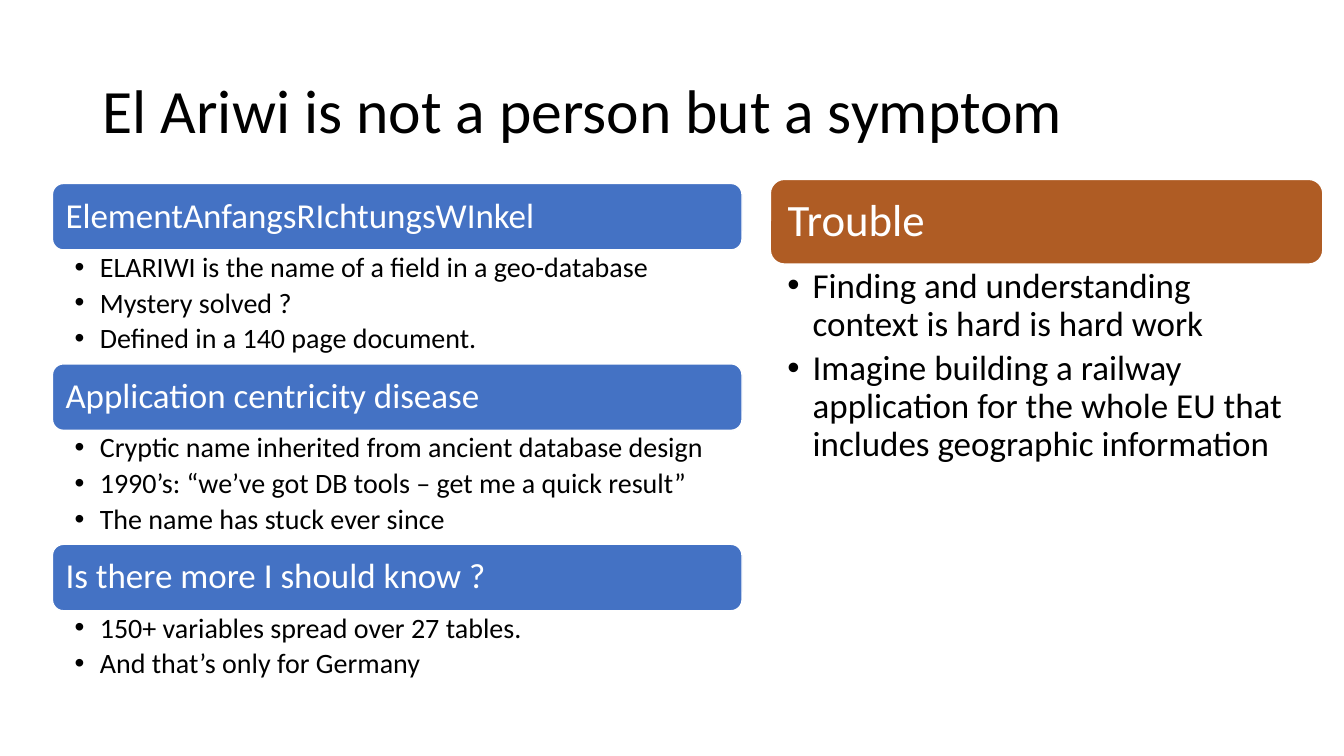
"""Build the slide on the El Ariwi symptom: three blue topics and one brown conclusion."""
from dataclasses import dataclass

from lxml import etree
from pptx import Presentation
from pptx.dml.color import RGBColor
from pptx.enum import shapes, text
from pptx.oxml.ns import qn
from pptx.util import Inches, Pt

TITLE = "El Ariwi is not a person but a symptom"
TOPICS = [
    ("ElementAnfangsRIchtungsWInkel", [
        "ELARIWI is the name of a field in a geo-database",
        "Mystery solved ?",
        "Defined in a 140 page document.",
    ]),
    ("Application centricity disease", [
        "Cryptic name inherited from ancient database design",
        "1990’s: “we’ve got DB tools – get me a quick result”",
        "The name has stuck ever since",
    ]),
    ("Is there more I should know ?", [
        "150+ variables spread over 27 tables.",
        "And that’s only for Germany",
    ]),
]
CONCLUSIONS = [
    ("Trouble", [
        "Finding and understanding context is hard is hard work",
        "Imagine building a railway application for the whole EU that includes geographic information",
    ]),
]


@dataclass(frozen=True)
class Theme:
    font: str = "Calibri"
    ink: RGBColor = RGBColor(0x00, 0x00, 0x00)
    paper: RGBColor = RGBColor(0xFF, 0xFF, 0xFF)
    blue: RGBColor = RGBColor(0x44, 0x72, 0xC4)
    brown: RGBColor = RGBColor(0xAF, 0x5C, 0x24)
    title_size: int = 44
    line_spacing: float = 0.9
    list_gap: float = 0.2
    indent: float = 0.25


@dataclass(frozen=True)
class Column:
    left: float
    top: float
    width: float
    bar_height: float
    list_height: float
    bar_inset: float
    list_insets: tuple
    bar_size: int
    list_size: int
    color: RGBColor


THEME = Theme()
TOPIC_COLUMN = Column(0.52, 1.82, 6.84, 0.66, 1.13, 0.1, (0.22, 0.03, 0.19, 0.03), 25, 20, THEME.blue)
CONCLUSION_COLUMN = Column(7.64, 1.78, 5.48, 0.84, 2.1, 0.13, (0.17, 0.04, 0.25, 0.04), 32, 25, THEME.brown)


def place(shape, left, top, width, height):
    shape.left, shape.top = Inches(left), Inches(top)
    shape.width, shape.height = Inches(width), Inches(height)


def set_frame(frame, insets, anchor):
    frame.margin_left, frame.margin_top, frame.margin_right, frame.margin_bottom = map(Inches, insets)
    frame.vertical_anchor = anchor
    frame.word_wrap = True
    frame.auto_size = text.MSO_AUTO_SIZE.NONE


def style(para, size, color):
    para.alignment = text.PP_ALIGN.LEFT
    para.line_spacing = THEME.line_spacing
    para.space_before = Pt(0)
    para.font.name = THEME.font
    para.font.size = Pt(size)
    para.font.bold = False
    para.font.color.rgb = color


def add_bullet(para):
    properties = para._p.get_or_add_pPr()
    properties.set("marL", str(Inches(THEME.indent)))
    properties.set("indent", str(-Inches(THEME.indent)))
    etree.SubElement(properties, qn("a:buFont")).set("typeface", "Arial")
    etree.SubElement(properties, qn("a:buChar")).set("char", "•")


def add_bar(page, heading, column, top):
    bar = page.shapes.add_shape(
        shapes.MSO_SHAPE.ROUNDED_RECTANGLE,
        Inches(column.left), Inches(top), Inches(column.width), Inches(column.bar_height))
    bar.shadow.inherit = False
    bar.fill.solid()
    bar.fill.fore_color.rgb = column.color
    bar.line.color.rgb = THEME.paper
    bar.line.width = Pt(1)
    set_frame(bar.text_frame, [column.bar_inset] * 4, text.MSO_ANCHOR.MIDDLE)
    bar.text_frame.text = heading
    style(bar.text_frame.paragraphs[0], column.bar_size, THEME.paper)


def fill_list(box, items, column, top):
    place(box, column.left, top, column.width, column.list_height)
    set_frame(box.text_frame, column.list_insets, text.MSO_ANCHOR.TOP)
    box.text_frame.text = "\n".join(items)
    for para in box.text_frame.paragraphs:
        add_bullet(para)
        style(para, column.list_size, THEME.ink)
        para.space_after = Pt(column.list_size * THEME.list_gap)


def fill_column(page, sections, column, boxes):
    pitch = column.bar_height + column.list_height
    for row, (heading, items) in enumerate(sections):
        top = column.top + row * pitch
        add_bar(page, heading, column, top)
        fill_list(next(boxes), items, column, top + column.bar_height)


def main():
    deck = Presentation()
    deck.slide_width, deck.slide_height = Inches(13.33), Inches(7.5)
    page = deck.slides.add_slide(deck.slide_layouts.get_by_name("Comparison"))
    title = page.shapes.title
    place(title, 0.92, 0.4, 11.5, 1.45)
    set_frame(title.text_frame, (0.1, 0.05, 0.1, 0.05), text.MSO_ANCHOR.MIDDLE)
    title.text_frame.text = TITLE
    style(title.text_frame.paragraphs[0], THEME.title_size, THEME.ink)
    boxes = iter([box for box in page.placeholders if box.placeholder_format.idx > 0])
    fill_column(page, TOPICS, TOPIC_COLUMN, boxes)
    fill_column(page, CONCLUSIONS, CONCLUSION_COLUMN, boxes)
    deck.save("out.pptx")


if __name__ == "__main__":
    main()
